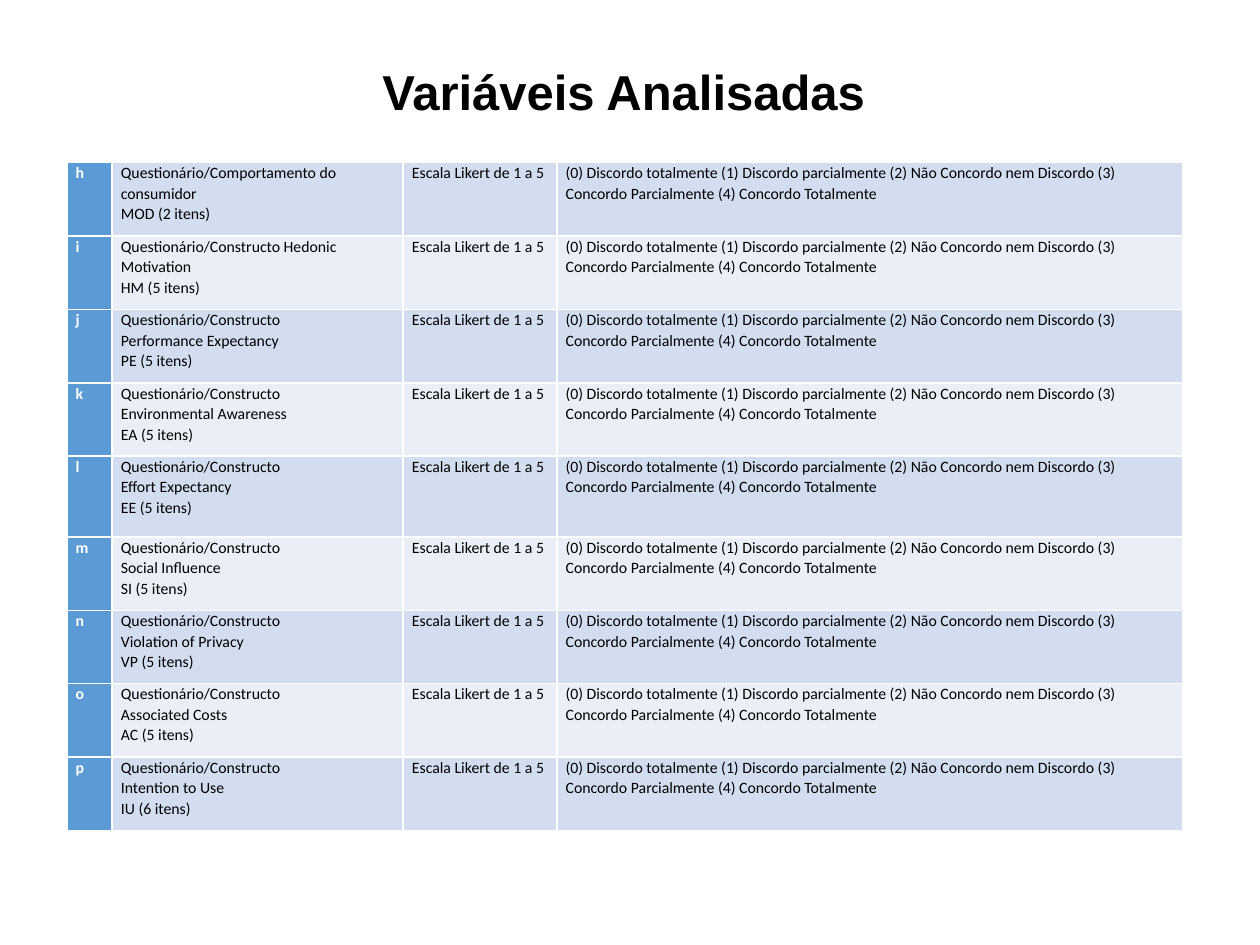
from lxml import etree
from pptx import Presentation
from pptx import util as u
from pptx.dml.color import RGBColor
from pptx.enum import text
from pptx.oxml.ns import qn

COLORS = {
    "black": "000000",
    "white": "FFFFFF",
    "key": "5B9BD5",
    "odd": "D2DEEF",
    "even": "EAEFF7",
}
GRID_COLUMNS, GRID_ROWS = 100, 75
COLUMN_WIDTHS = [3.6, 23.1, 12.2, 49.7]
ROW_HEIGHT, TALL_ROW_HEIGHT, TALL_ROW_KEY = 5.83, 6.4, "l"

SCALE = "Escala Likert de 1 a 5"
ANSWERS = (
    "(0) Discordo totalmente (1) Discordo parcialmente "
    "(2) Não Concordo nem Discordo (3) Concordo Parcialmente "
    "(4) Concordo Totalmente"
)
CONSTRUCT = "Questionário/Constructo"
VARIABLES = [
    ("h", ["Questionário/Comportamento do consumidor", "MOD (2 itens)"]),
    ("i", [CONSTRUCT + " Hedonic Motivation", "HM (5 itens)"]),
    ("j", [CONSTRUCT, "Performance Expectancy", "PE (5 itens)"]),
    ("k", [CONSTRUCT, "Environmental Awareness", "EA (5 itens)"]),
    ("l", [CONSTRUCT, "Effort Expectancy", "EE (5 itens)"]),
    ("m", [CONSTRUCT, "Social Influence", "SI (5 itens)"]),
    ("n", [CONSTRUCT, "Violation of Privacy", "VP (5 itens)"]),
    ("o", [CONSTRUCT, "Associated Costs", "AC (5 itens)"]),
    ("p", [CONSTRUCT, "Intention to Use", "IU (6 itens)"]),
]


class SlideBuilder:
    title_font, title_size = "Arial", 28
    table_font, table_size = "Calibri", 9
    line_spacing = 1.07
    cell_margin = 0.7

    def __init__(self, presentation):
        self.presentation = presentation
        self.slide = presentation.slides.add_slide(presentation.slide_layouts[5])

    def across(self, columns):
        return round(self.presentation.slide_width * columns / GRID_COLUMNS)

    def down(self, rows):
        return round(self.presentation.slide_height * rows / GRID_ROWS)

    def add_run(self, paragraph, words, font, size, color, bold):
        run = paragraph.add_run()
        run.text = words
        run.font.name = font
        run.font.size = u.Pt(size)
        run.font.bold = bold
        run.font.color.rgb = RGBColor.from_string(COLORS[color])

    def title(self, words, left, top, width, height):
        shape = self.slide.shapes.title
        shape.left, shape.top = self.across(left), self.down(top)
        shape.width, shape.height = self.across(width), self.down(height)
        frame = shape.text_frame
        frame.word_wrap = False
        frame.auto_size = text.MSO_AUTO_SIZE.SHAPE_TO_FIT_TEXT
        frame.vertical_anchor = text.MSO_ANCHOR.TOP
        paragraph = frame.paragraphs[0]
        paragraph.alignment = text.PP_ALIGN.CENTER
        self.add_run(paragraph, words, self.title_font, self.title_size, "black", True)

    def borders(self, cell):
        properties = cell._tc.get_or_add_tcPr()
        for side in ("a:lnL", "a:lnR", "a:lnT", "a:lnB"):
            line = etree.SubElement(properties, qn(side), w=str(u.Pt(1)))
            fill = etree.SubElement(line, qn("a:solidFill"))
            etree.SubElement(fill, qn("a:srgbClr"), val=COLORS["white"])

    def cell(self, cell, lines, fill, color, bold):
        self.borders(cell)
        cell.fill.solid()
        cell.fill.fore_color.rgb = RGBColor.from_string(COLORS[fill])
        cell.margin_left = cell.margin_right = self.across(self.cell_margin)
        cell.margin_top = cell.margin_bottom = 0
        frame = cell.text_frame
        for index, words in enumerate(lines):
            paragraph = frame.add_paragraph() if index else frame.paragraphs[0]
            paragraph.line_spacing = self.line_spacing
            self.add_run(paragraph, words, self.table_font, self.table_size, color, bold)

    def table(self, variables, left, top):
        heights = [
            TALL_ROW_HEIGHT if key == TALL_ROW_KEY else ROW_HEIGHT
            for key, _ in variables
        ]
        table = self.slide.shapes.add_table(
            len(variables), len(COLUMN_WIDTHS),
            self.across(left), self.down(top),
            self.across(sum(COLUMN_WIDTHS)), self.down(sum(heights)),
        ).table
        table.first_row = False
        table.first_col = True
        for column, width in zip(table.columns, COLUMN_WIDTHS):
            column.width = self.across(width)
        for index, (key, description) in enumerate(variables):
            row = table.rows[index]
            row.height = self.down(heights[index])
            band = "even" if index % 2 else "odd"
            key_cell, *detail_cells = row.cells
            self.cell(key_cell, [key], "key", "white", True)
            for cell, lines in zip(detail_cells, (description, [SCALE], [ANSWERS])):
                self.cell(cell, lines, band, "black", False)


def main():
    presentation = Presentation()
    presentation.slide_width = u.Inches(10)
    presentation.slide_height = u.Inches(7.5)
    builder = SlideBuilder(presentation)
    builder.title("Variáveis Analisadas", 29.1, 4.4, 40.8, 5.7)
    builder.table(VARIABLES, 5.3, 12.9)
    presentation.save("out.pptx")


if __name__ == "__main__":
    main()
